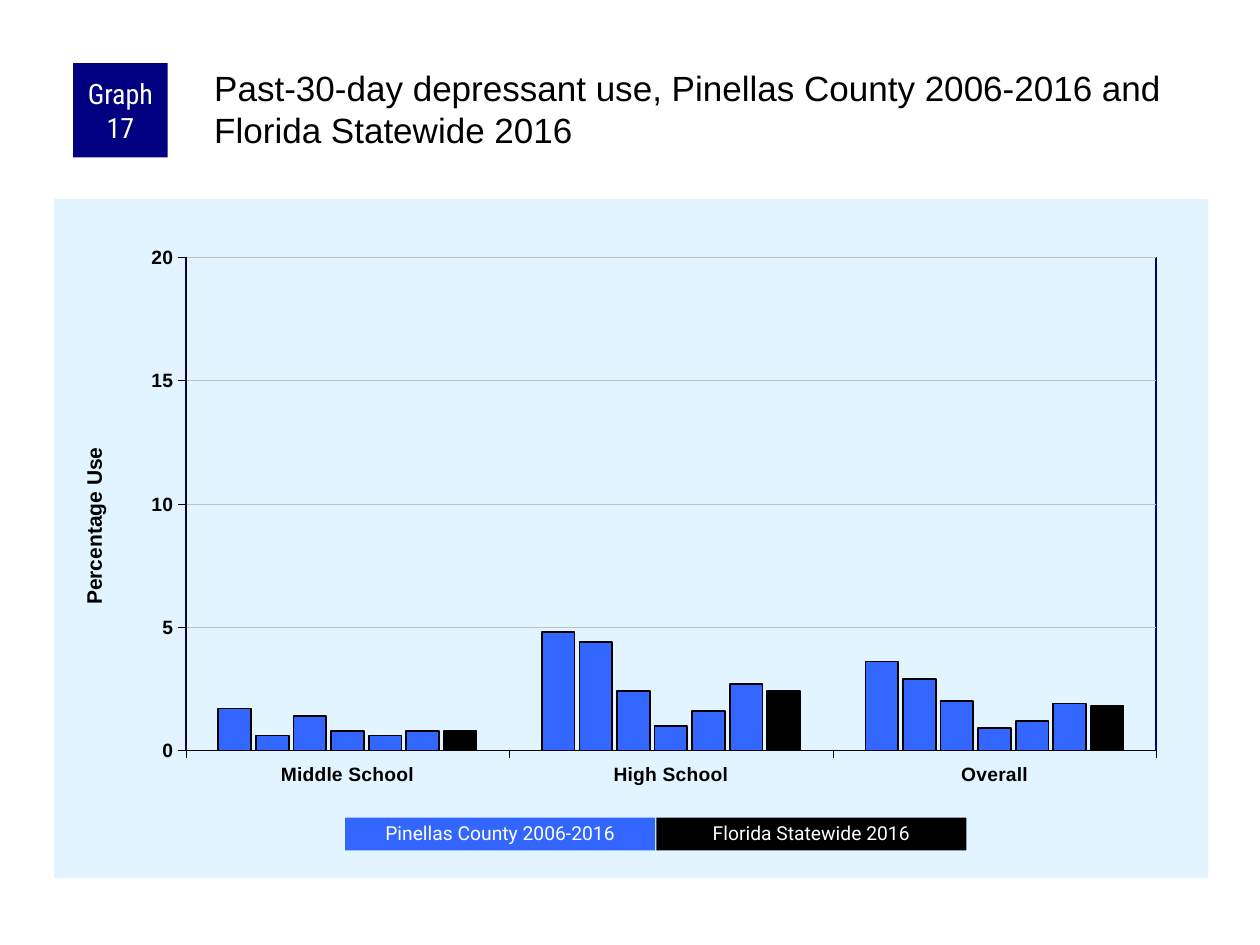
from typing import NamedTuple

from lxml.etree import fromstring
from pptx import Presentation
from pptx.chart.data import CategoryChartData
from pptx.dml.color import RGBColor
from pptx.enum.chart import XL_CHART_TYPE as ChartType, XL_TICK_MARK as Tick
from pptx.enum.shapes import MSO_SHAPE as Shape
from pptx.enum.text import MSO_ANCHOR as Anchor, MSO_AUTO_SIZE as AutoSize, PP_ALIGN as Align
from pptx.oxml.ns import nsdecls
from pptx.util import Inches, Pt

NAVY, BLUE, BLACK, WHITE = "000080", "3366FF", "000000", "FFFFFF"
PALE_BLUE, GRID_GREY = "E1F4FF", "C0C0C0"

GRADES = ["Middle School", "High School", "Overall"]
COUNTY_USE = [
    (1.7, 4.8, 3.6),
    (0.6, 4.4, 2.9),
    (1.4, 2.4, 2),
    (0.8, 1, 0.9),
    (0.6, 1.6, 1.2),
    (0.8, 2.7, 1.9),
]
STATE_USE = (0.8, 2.4, 1.8)


class Label(NamedTuple):
    text: str
    left: float
    top: float
    width: float
    height: float
    fill: str
    font: str
    size: float
    inset: float
    spacing: float


LABELS = [
    Label("Graph 17", 0.58, 0.5, 0.75, 0.75, NAVY, "Roboto Condensed", 16, 0.05, 1),
    Label("Pinellas County 2006-2016", 2.74, 6.49, 2.46, 0.26, BLUE, "Roboto", 11, 0.1, 0.9),
    Label("Florida Statewide 2016", 5.21, 6.49, 2.46, 0.26, BLACK, "Roboto", 11, 0.1, 0.9),
]


def rgb(color: str) -> RGBColor:
    return RGBColor.from_string(color)


def set_font(font, name: str, size: float, color: str, bold: bool = False) -> None:
    for key, value in {"name": name, "size": Pt(size), "bold": bold}.items():
        setattr(font, key, value)
    font.color.rgb = rgb(color)


def set_line(line, color: str, width: float) -> None:
    line.color.rgb = rgb(color)
    line.width = Pt(width)


def set_frame(frame, **formats) -> None:
    for key, value in formats.items():
        setattr(frame, key, value)


def add_label(slide, label: Label) -> None:
    box = slide.shapes.add_shape(
        Shape.RECTANGLE, *map(Inches, (label.left, label.top, label.width, label.height)))
    box.shadow.inherit = False
    box.fill.solid()
    box.fill.fore_color.rgb = rgb(label.fill)
    box.line.fill.background()
    set_frame(box.text_frame, word_wrap=True, vertical_anchor=Anchor.MIDDLE,
              margin_left=Inches(label.inset), margin_right=Inches(label.inset),
              margin_top=0, margin_bottom=0)
    paragraph = box.text_frame.paragraphs[0]
    paragraph.text = label.text
    paragraph.alignment = Align.CENTER
    paragraph.line_spacing = label.spacing
    set_font(paragraph.runs[0].font, label.font, label.size, WHITE)


def place(parent, position: int, **values) -> None:
    """Give a chart part a manual layout."""
    for old in parent.xpath("c:layout"):
        parent.remove(old)
    settings = "".join(f'<c:{key} val="{value}"/>' for key, value in values.items())
    parent.insert(position, fromstring(
        f'<c:layout {nsdecls("c")}><c:manualLayout>{settings}</c:manualLayout></c:layout>'))


def area_format(content: str):
    return fromstring(f'<c:spPr {nsdecls("c", "a")}>{content}</c:spPr>')


def solid(color: str) -> str:
    return f'<a:solidFill><a:srgbClr val="{color}"/></a:solidFill>'


def style_axes(chart) -> None:
    for axis in (chart.category_axis, chart.value_axis):
        axis.major_tick_mark = Tick.OUTSIDE
        axis.minor_tick_mark = Tick.NONE
        set_font(axis.tick_labels.font, "Arial", 11, BLACK, bold=True)
        set_line(axis.format.line, BLACK, 0.25)

    percent = chart.value_axis
    scale = {"minimum_scale": 0, "maximum_scale": 20, "major_unit": 5}
    for key, value in scale.items():
        setattr(percent, key, value)
    set_line(percent.major_gridlines.format.line, GRID_GREY, 0.25)

    heading = percent.axis_title.text_frame
    heading.text = "Percentage Use"
    set_font(heading.paragraphs[0].runs[0].font, "Arial", 12, BLACK, bold=True)
    title = chart.element.xpath("c:chart/c:plotArea/c:valAx/c:title")[0]
    body = title.xpath("c:tx/c:rich/a:bodyPr")[0]
    body.set("rot", "-5400000")
    body.set("vert", "horz")
    place(title, 1, xMode="edge", yMode="edge", x=0.02, y=0.36)


def add_use_chart(slide) -> None:
    data = CategoryChartData()
    data.categories = GRADES
    for number, values in enumerate([*COUNTY_USE, STATE_USE], 1):
        data.add_series(f"Series {number}", values)
    chart = slide.shapes.add_chart(
        ChartType.COLUMN_CLUSTERED, *map(Inches, (0.43, 1.58, 9.16, 5.39)), data).chart
    chart.has_legend = False
    chart.has_title = False
    set_font(chart.font, "Arial", 8, BLACK)

    columns = chart.plots[0]
    columns.gap_width = 200
    columns.overlap = -15
    columns.vary_by_categories = False
    colors = [BLUE] * len(COUNTY_USE) + [BLACK]
    for series, color in zip(columns.series, colors):
        series.format.fill.solid()
        series.format.fill.fore_color.rgb = rgb(color)
        set_line(series.format.line, BLACK, 1)

    style_axes(chart)
    chart_body = chart.element.xpath("c:chart")[0]
    chart_body.addnext(area_format(solid(PALE_BLUE) + "<a:ln><a:noFill/></a:ln>"))
    plot_area = chart_body.xpath("c:plotArea")[0]
    place(plot_area, 0, layoutTarget="inner", xMode="edge", yMode="edge",
          x=0.114, y=0.086, w=0.841, h=0.726)
    plot_area.append(area_format(f'<a:noFill/><a:ln w="{Pt(1)}">{solid(NAVY)}</a:ln>'))


def set_title(slide) -> None:
    title = slide.shapes.title
    title.left, title.top, title.width, title.height = map(Inches, (1.67, 0.5, 7.92, 0.83))
    set_frame(title.text_frame, word_wrap=True, auto_size=AutoSize.NONE,
              vertical_anchor=Anchor.TOP, margin_left=Inches(0.03),
              margin_top=Inches(0.03), margin_right=0, margin_bottom=0)
    paragraph = title.text_frame.paragraphs[0]
    paragraph.text = ("Past-30-day depressant use, Pinellas County 2006-2016 "
                      "and Florida Statewide 2016")
    paragraph.alignment = Align.LEFT
    set_font(paragraph.runs[0].font, "Arial", 20, BLACK)


def main() -> None:
    deck = Presentation()
    deck.slide_width, deck.slide_height = Inches(10), Inches(7.5)
    slide = deck.slides.add_slide(deck.slide_layouts[5])
    set_title(slide)
    add_use_chart(slide)
    for label in LABELS:
        add_label(slide, label)
    deck.save("out.pptx")


if __name__ == "__main__":
    main()
